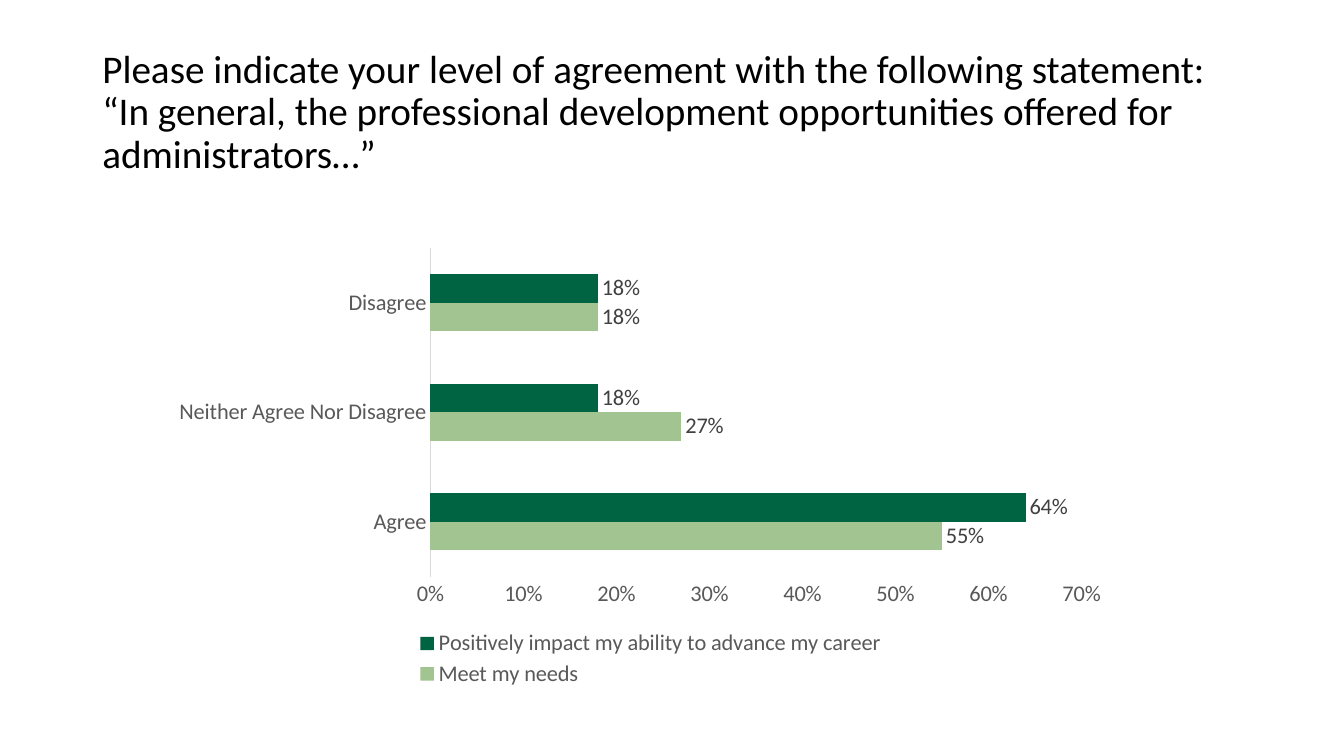
from dataclasses import dataclass

from lxml import etree
from pptx import Presentation
from pptx import util as u
from pptx.chart import data as chart_data
from pptx.dml import color
from pptx.enum import chart as charts, text
from pptx.oxml import ns


@dataclass(frozen=True)
class Theme:
    """Colours, font and type sizes of the survey slide."""
    font: str = "Calibri"
    title_size: int = 28
    chart_size: int = 16
    ink: str = "000000"
    axis_ink: str = "595959"
    label_ink: str = "404040"
    axis_line: str = "D9D9D9"
    light_green: str = "A1C490"
    dark_green: str = "006342"


class SurveyPage:
    """Draw the elements of a survey page in one theme."""

    def __init__(self, deck, theme):
        self.theme = theme
        self.page = deck.slides.add_slide(deck.slide_layouts[6])

    def style(self, font, size, ink):
        """Apply the theme font at a size and colour."""
        font.name = self.theme.font
        font.size = u.Pt(size)
        font.bold = False
        font.color.rgb = color.RGBColor.from_string(ink)

    def title(self, lines, left, top, width, height):
        """Add the question as one paragraph with line breaks."""
        box = self.page.shapes.add_textbox(*map(u.Cm, (left, top, width, height)))
        frame = box.text_frame
        frame.word_wrap = True
        frame.vertical_anchor = text.MSO_ANCHOR.MIDDLE
        para = frame.paragraphs[0]
        para.text = "\v".join(lines)
        para.line_spacing = 0.9
        self.style(para.font, self.theme.title_size, self.theme.ink)

    def place(self, parent, index, target, **fractions):
        """Give a chart part a fixed place as fractions of the chart."""
        for old in parent.findall(ns.qn("c:layout")):
            parent.remove(old)
        layout = etree.Element(ns.qn("c:layout"))
        manual = etree.SubElement(layout, ns.qn("c:manualLayout"))
        settings = {"layoutTarget": target} if target else {}
        settings |= {"xMode": "edge", "yMode": "edge", **fractions}
        for name, value in settings.items():
            etree.SubElement(manual, ns.qn(f"c:{name}")).set("val", str(value))
        parent.insert(index, layout)

    def axis(self, axis):
        """Style an axis without ticks or gridlines."""
        axis.has_major_gridlines = False
        axis.major_tick_mark = axis.minor_tick_mark = charts.XL_TICK_MARK.NONE
        self.style(axis.tick_labels.font, self.theme.chart_size, self.theme.axis_ink)

    def bars(self, categories, series, left, top, width, height):
        """Add a clustered bar chart of percentages."""
        theme = self.theme
        data = chart_data.CategoryChartData(number_format="0%")
        data.categories = categories
        for name, values, _ in series:
            data.add_series(name, values)
        chart = self.page.shapes.add_chart(
            charts.XL_CHART_TYPE.BAR_CLUSTERED,
            *map(u.Cm, (left, top, width, height)), data).chart
        chart.has_title = False
        self.style(chart.font, theme.chart_size, theme.ink)

        self.axis(chart.category_axis)
        line = chart.category_axis.format.line
        line.color.rgb = color.RGBColor.from_string(theme.axis_line)
        line.width = u.Pt(0.75)
        values = chart.value_axis
        self.axis(values)
        values.format.line.fill.background()
        values.minimum_scale, values.maximum_scale, values.major_unit = 0, 0.7, 0.1
        values.tick_labels.number_format = "0%"
        values.tick_labels.number_format_is_linked = False

        plot = chart.plots[0]
        plot.gap_width, plot.overlap, plot.vary_by_categories = 182, 0, False
        for bar, (_, _, ink) in zip(plot.series, series):
            bar.format.fill.solid()
            bar.format.fill.fore_color.rgb = color.RGBColor.from_string(ink)
            labels = bar.data_labels
            labels.show_value = True
            labels.number_format = "0%"
            labels.number_format_is_linked = False
            labels.position = charts.XL_LABEL_POSITION.OUTSIDE_END
            self.style(labels.font, theme.chart_size, theme.label_ink)

        chart.has_legend = True
        legend = chart.legend
        legend.position = charts.XL_LEGEND_POSITION.BOTTOM
        legend.include_in_layout = False
        self.style(legend.font, theme.chart_size, theme.axis_ink)
        area = chart.element.find(".//" + ns.qn("c:plotArea"))
        self.place(area, 0, "inner", x=0.28, y=0.02, w=0.68, h=0.72)
        key = chart.element.find(".//" + ns.qn("c:legend"))
        self.place(key, 1, None, x=0.26, y=0.85, w=0.5, h=0.14)


def main():
    """Build and save the survey slide."""
    deck = Presentation()
    deck.slide_width, deck.slide_height = u.Cm(33.87), u.Cm(19.05)
    theme = Theme()
    page = SurveyPage(deck, theme)
    page.title(
        ["Please indicate your level of agreement with the following statement:",
         "“In general, the professional development opportunities offered for "
         "administrators…”"],
        2.33, 1.01, 29.21, 3.68)
    page.bars(
        ["Agree", "Neither Agree Nor Disagree", "Disagree"],
        [("Meet my needs", (0.55, 0.27, 0.18), theme.light_green),
         ("Positively impact my ability to advance my career",
          (0.64, 0.18, 0.18), theme.dark_green)],
        4.09, 6.02, 24.13, 11.5)
    deck.save("out.pptx")


if __name__ == "__main__":
    main()
